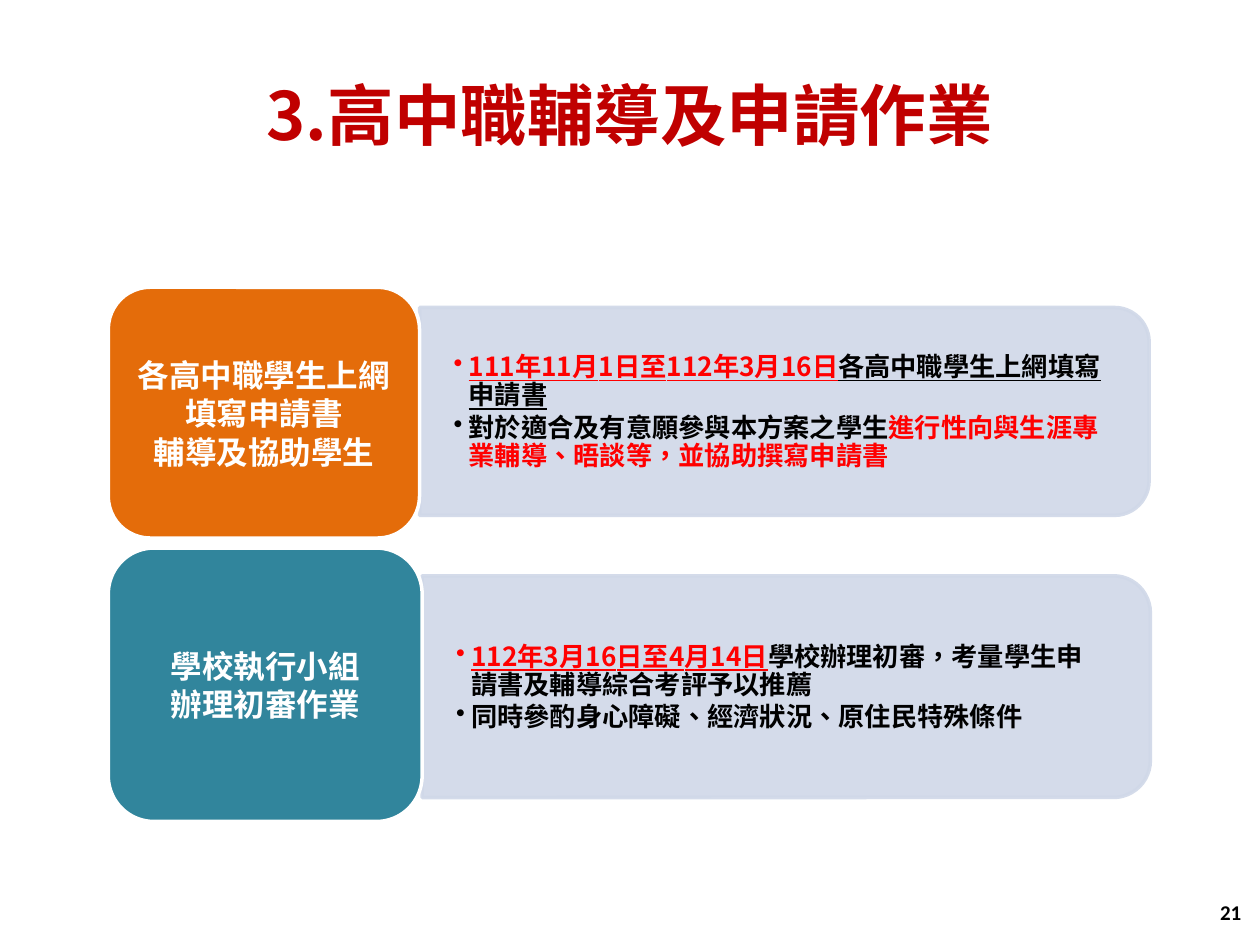
"""Build the slide on high-school counselling and application work."""
from lxml import etree
from pptx import Presentation
from pptx.dml.color import RGBColor
from pptx.enum.shapes import MSO_SHAPE
from pptx.enum.text import MSO_ANCHOR, PP_ALIGN
from pptx.oxml.ns import qn
from pptx.util import Inches, Pt

CARD, PANEL = MSO_SHAPE.ROUNDED_RECTANGLE, MSO_SHAPE.ROUND_2_SAME_RECTANGLE
MIDDLE = MSO_ANCHOR.MIDDLE
CENTER, RIGHT = PP_ALIGN.CENTER, PP_ALIGN.RIGHT
COLORS = {"title": "C00000", "panel": "D0D8E8", "white": "FFFFFF", "black": "000000",
          "red": "FF0000", "orange": "E46C0A", "teal": "31859C"}
CJK = "Noto Sans CJK SC"

deck = Presentation()
deck.slide_width, deck.slide_height = Inches(10), Inches(7.5)
COL, ROW = deck.slide_width / 100, deck.slide_height / 75
slide = deck.slides.add_slide(deck.slide_layouts[6])


def prepare(frame, side, edge):
    frame.word_wrap = True
    frame.vertical_anchor = MIDDLE
    frame.margin_left = frame.margin_right = int(side * COL)
    frame.margin_top = frame.margin_bottom = int(edge * ROW)


def write(paragraph, text, size, color, face=CJK, underline=False):
    run = paragraph.add_run()
    run.text = text
    font = run.font
    font.size, font.bold, font.name = Pt(size), True, face
    font.color.rgb = RGBColor.from_string(COLORS[color])
    if underline:
        font.underline = True
    properties = run._r.get_or_add_rPr()
    properties.set("lang", "zh-TW")
    etree.SubElement(properties, qn("a:ea")).set("typeface", face)


captions = [
    ((0, 6.1, 100, 5.9), "3.高中職輔導及申請作業", 38, "title", CJK, CENTER),
    ((76.2, 70.4, 23.3, 4), "21", 12, "black", "Calibri", RIGHT),
]
for (x, y, w, h), text, size, color, face, align in captions:
    caption = slide.shapes.add_textbox(int(x * COL), int(y * ROW), int(w * COL), int(h * ROW))
    prepare(caption.text_frame, 1, 0.5)
    paragraph = caption.text_frame.paragraphs[0]
    paragraph.alignment = align
    write(paragraph, text, size, color, face)

stages = [
    {"color": "orange", "card": (22.8, 24.7, 19.9), "panel": (24.4, 57.9, 16.5),
     "heading": ["各高中職學生上網", "填寫申請書", "輔導及協助學生"],
     "points": [[("111年11月1日至112年3月16日", "red", True),
                 ("各高中職學生上網填寫申請書", "black", True)],
                [("對於適合及有意願參與本方案之學生", "black", False),
                 ("進行性向與生涯專業輔導、晤談等，並協助撰寫申請書", "red", False)]]},
    {"color": "teal", "card": (43.5, 24.9, 21.7), "panel": (45.7, 57.8, 17.6),
     "heading": ["學校執行小組", "辦理初審作業"],
     "points": [[("112年3月16日至4月14日", "red", True),
                 ("學校辦理初審，考量學生申請書及輔導綜合考評予以推薦", "black", False)],
                [("同時參酌身心障礙、經濟狀況、原住民特殊條件", "black", False)]]},
]
CARD_LEFT = 8.6
for stage in stages:
    card_top, card_width, card_height = stage["card"]
    top, length, height = stage["panel"]
    left = CARD_LEFT + card_width
    panel = slide.shapes.add_shape(
        PANEL, int((left + (length - height) / 2) * COL), int((top + (height - length) / 2) * ROW),
        int(height * COL), int(length * ROW))
    panel.rotation = 90
    card = slide.shapes.add_shape(CARD, int(CARD_LEFT * COL), int(card_top * ROW),
                                  int(card_width * COL), int(card_height * ROW))
    for shape, fill, line in [(panel, "panel", "panel"), (card, stage["color"], "white")]:
        shape.shadow.inherit = False
        shape.fill.solid()
        shape.fill.fore_color.rgb = RGBColor.from_string(COLORS[fill])
        shape.line.color.rgb = RGBColor.from_string(COLORS[line])
        shape.line.width = Pt(2)
    for tint in panel._element.spPr.iter(qn("a:srgbClr")):
        etree.SubElement(tint, qn("a:alpha")).set("val", "90000")

    prepare(card.text_frame, 0.7, 0.4)
    card.text_frame.text = "\n".join([""] * len(stage["heading"]))
    for paragraph, text in zip(card.text_frame.paragraphs, stage["heading"]):
        paragraph.alignment = CENTER
        paragraph.line_spacing = Pt(22)
        write(paragraph, text, 18, "white")

    details = slide.shapes.add_textbox(int(left * COL), int((top + 0.9) * ROW),
                                       int((length - 0.8) * COL), int((height - 1.6) * ROW))
    prepare(details.text_frame, 2.7, 1.4)
    details.text_frame.text = "\n".join([""] * len(stage["points"]))
    for paragraph, pieces in zip(details.text_frame.paragraphs, stage["points"]):
        paragraph.level = 1
        paragraph.line_spacing = 0.9
        paragraph.space_after = Pt(2.25)
        properties = paragraph._p.get_or_add_pPr()
        properties.set("marL", str(Inches(0.12)))
        properties.set("indent", str(-Inches(0.12)))
        etree.SubElement(properties, qn("a:buChar")).set("char", "•")
        for text, color, underline in pieces:
            write(paragraph, text, 15, color, underline=underline)

deck.save("out.pptx")
